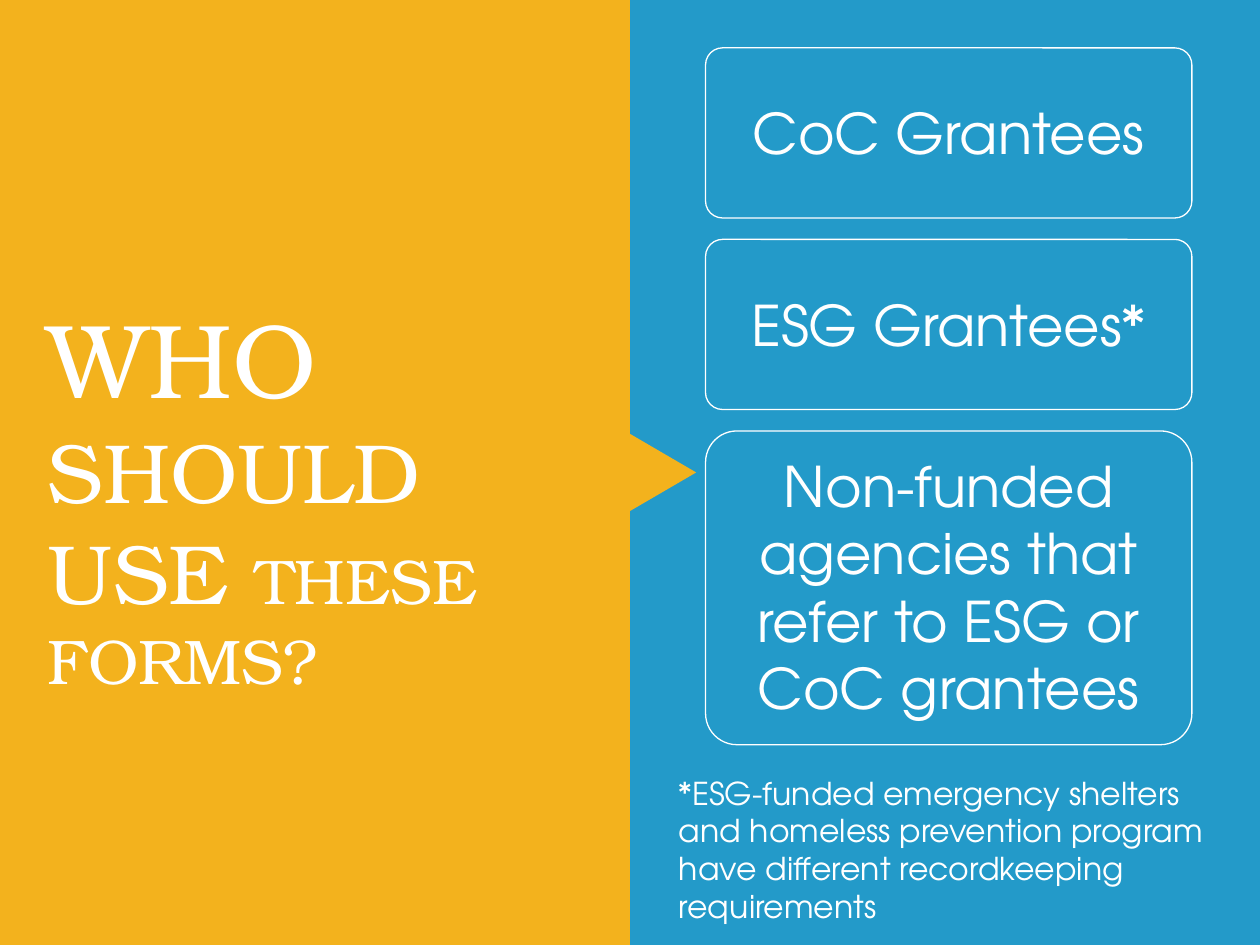
from pptx import Presentation
from pptx.dml.color import RGBColor
from pptx.enum import shapes, text
from pptx.util import Inches, Pt

WHITE, GOLD, BLUE = "FFFFFF", "F3B21D", "239AC9"
SERIF, SANS = "TeX Gyre Bonum", "TeX Gyre Adventor"
TITLE = [[("WHO", 60)], [("SHOULD USE ", 48), ("THESE FORMS?", 36)]]
CARDS = [
    ("CoC Grantees", 1.35, 0.64),
    ("ESG Grantees*", 1.35, 0.64),
    ("Non-funded agencies that refer to ESG or CoC grantees", 2.49, 2.26),
]
NOTE = ("*ESG-funded emergency shelters and homeless prevention program "
        "have different recordkeeping requirements")
CARD_X, CARD_Y, CARD_W, CARD_GAP, CARD_PAD = 5.6, 0.38, 3.86, 0.17, 0.16


def rgb(value):
    """Turn a hex string into a colour."""
    return RGBColor.from_string(value)


def add_shape(parent, kind, box, fill=None, line=None):
    """Add a flat preset shape with an optional fill and outline."""
    s = parent.add_shape(kind, *map(Inches, box))
    s.shadow.inherit = False
    if fill:
        s.fill.solid()
        s.fill.fore_color.rgb = rgb(fill)
    else:
        s.fill.background()
    if line:
        s.line.color.rgb = rgb(line)
        s.line.width = Pt(0.75)
    else:
        s.line.fill.background()
    return s


def add_text(parent, paragraphs, box, font=SANS, color=WHITE,
             align=text.PP_ALIGN.LEFT):
    """Add a wrapping text box from paragraphs of (text, size) runs."""
    tf = parent.add_textbox(*map(Inches, box)).text_frame
    tf.word_wrap = True
    tf.auto_size = text.MSO_AUTO_SIZE.SHAPE_TO_FIT_TEXT
    for i, runs in enumerate(paragraphs):
        p = tf.add_paragraph() if i else tf.paragraphs[0]
        p.alignment = align
        for words, size in runs:
            r = p.add_run()
            r.text = words
            r.font.name, r.font.size = font, Pt(size)
            r.font.color.rgb = rgb(color)


def add_cards(slide):
    """Stack the outlined cards, each with vertically centred text."""
    y = CARD_Y
    for words, height, text_h in CARDS:
        group = slide.shapes.add_group_shape().shapes
        s = add_shape(group, shapes.MSO_SHAPE.ROUNDED_RECTANGLE,
                      (CARD_X, y, CARD_W, height), line=WHITE)
        s.adjustments[0] = 0.1
        add_text(group, [[(words, 32)]],
                 (CARD_X + CARD_PAD, y + (height - text_h) / 2,
                  CARD_W - 2 * CARD_PAD, text_h),
                 align=text.PP_ALIGN.CENTER)
        y += height + CARD_GAP


def main():
    """Build and save the slide."""
    prs = Presentation()
    prs.slide_width, prs.slide_height = Inches(10), Inches(7.5)
    slide = prs.slides.add_slide(prs.slide_layouts[6])
    slide.background.fill.solid()
    slide.background.fill.fore_color.rgb = rgb(BLUE)
    add_shape(slide.shapes, shapes.MSO_SHAPE.RECTANGLE, (0, 0, 5, 7.5), GOLD)
    pointer = add_shape(slide.shapes, shapes.MSO_SHAPE.ISOSCELES_TRIANGLE,
                        (4.94, 3.48, 0.63, 0.54), GOLD)
    pointer.rotation = 90
    add_text(slide.shapes, TITLE, (0.28, 2.28, 4.46, 2.52), font=SERIF)
    add_cards(slide)
    add_text(slide.shapes, [[(NOTE, 18)]], (5.29, 6.09, 4.67, 1.31))
    prs.save("out.pptx")


if __name__ == "__main__":
    main()
